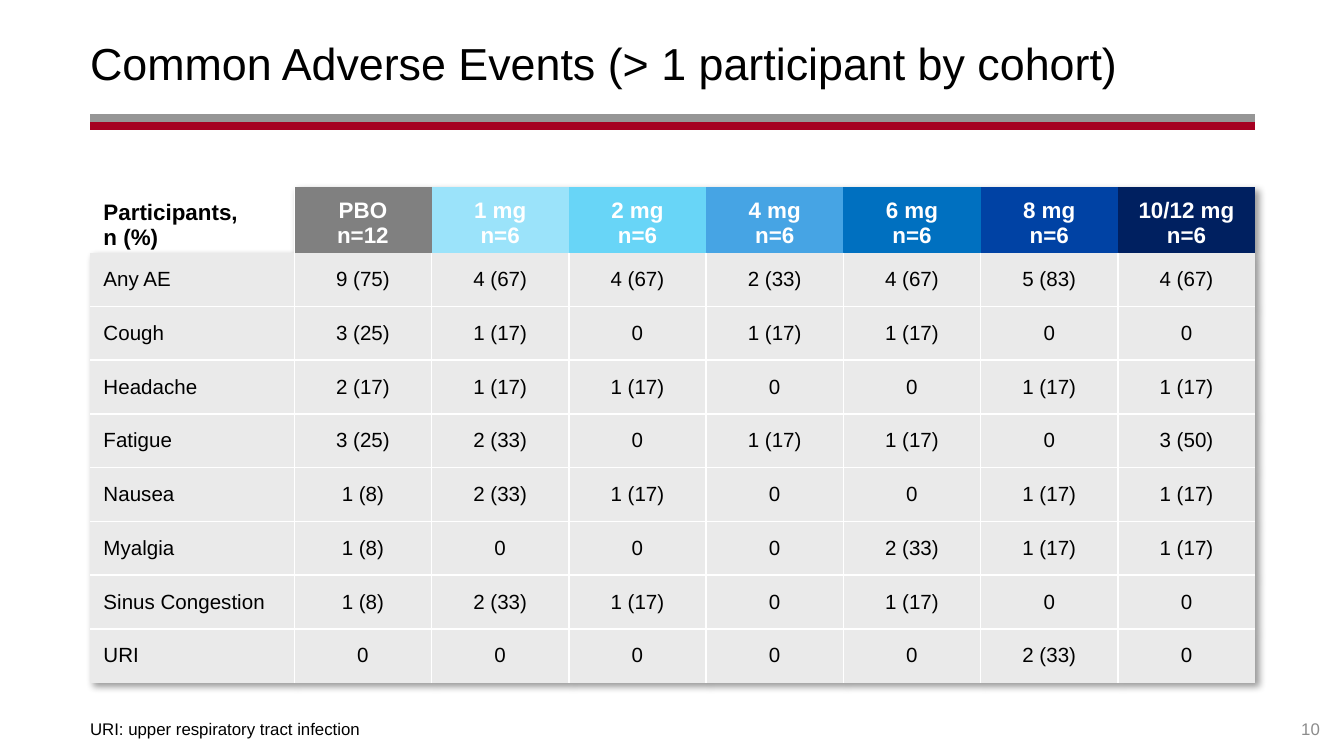
import pptx
import pptx.dml.color
import pptx.enum.shapes
import pptx.enum.text
import pptx.oxml
import pptx.oxml.ns
import pptx.util

Inches, Pt = pptx.util.Inches, pptx.util.Pt
RGBColor = pptx.dml.color.RGBColor
ALIGN = pptx.enum.text.PP_ALIGN
ANCHOR = pptx.enum.text.MSO_ANCHOR

BLACK = RGBColor(0x00, 0x00, 0x00)
WHITE = RGBColor(0xFF, 0xFF, 0xFF)
NUMBER_GRAY = RGBColor(0x8C, 0x8C, 0x8C)
RULE_GRAY = RGBColor(0x96, 0x96, 0x96)
RULE_RED = RGBColor(0xA5, 0x00, 0x21)
BODY_GRAY = RGBColor(0xEA, 0xEA, 0xEA)

TITLE = "Common Adverse Events (> 1 participant by cohort)"
FOOTNOTE = "URI: upper respiratory tract infection"
PAGE_NUMBER = "10"
ROW_HEADING = "Participants,\nn (%)"
COHORTS = [
    ("PBO\nn=12", RGBColor(0x80, 0x80, 0x80)),
    ("1 mg\nn=6", RGBColor(0x9B, 0xE3, 0xFA)),
    ("2 mg\nn=6", RGBColor(0x68, 0xD5, 0xF7)),
    ("4 mg\nn=6", RGBColor(0x46, 0xA4, 0xE4)),
    ("6 mg\nn=6", RGBColor(0x00, 0x70, 0xC0)),
    ("8 mg\nn=6", RGBColor(0x00, 0x42, 0xA4)),
    ("10/12 mg\nn=6", RGBColor(0x00, 0x20, 0x60)),
]
EVENTS = [
    ("Any AE", "9 (75)", "4 (67)", "4 (67)", "2 (33)", "4 (67)", "5 (83)", "4 (67)"),
    ("Cough", "3 (25)", "1 (17)", "0", "1 (17)", "1 (17)", "0", "0"),
    ("Headache", "2 (17)", "1 (17)", "1 (17)", "0", "0", "1 (17)", "1 (17)"),
    ("Fatigue", "3 (25)", "2 (33)", "0", "1 (17)", "1 (17)", "0", "3 (50)"),
    ("Nausea", "1 (8)", "2 (33)", "1 (17)", "0", "0", "1 (17)", "1 (17)"),
    ("Myalgia", "1 (8)", "0", "0", "0", "2 (33)", "1 (17)", "1 (17)"),
    ("Sinus Congestion", "1 (8)", "2 (33)", "1 (17)", "0", "1 (17)", "0", "0"),
    ("URI", "0", "0", "0", "0", "0", "2 (33)", "0"),
]

PAGE_WIDTH = 10
PAGE_HEIGHT = PAGE_WIDTH * 9 / 16
LEFT, WIDTH = 0.67, 8.67
TABLE_TOP, LABEL_WIDTH = 1.39, 1.52
HEADER_HEIGHT, ROW_HEIGHT = 0.49, 0.4
NO_STYLE = "{2D5ABB26-0587-4C30-8999-92F81FD0307C}"
DRAWING_NS = pptx.oxml.ns.nsdecls("a")
SHADOW = (
    f'<a:effectLst {DRAWING_NS}><a:outerShdw blurRad="50800" dist="38100" dir="2700000" '
    'algn="tl" rotWithShape="0"><a:srgbClr val="000000"><a:alpha val="40000"/>'
    "</a:srgbClr></a:outerShdw></a:effectLst>"
)


def style_paragraphs(frame, size, color, align=ALIGN.LEFT, bold=False, gap=0):
    for para in frame.paragraphs:
        para.alignment = align
        para.space_before = para.space_after = Pt(gap)
        para.font.name = "Arial"
        para.font.size = Pt(size)
        para.font.bold = bold
        para.font.color.rgb = color


def set_margins(target, across, down):
    target.margin_left = target.margin_right = Inches(across)
    target.margin_top = target.margin_bottom = Inches(down)


def add_text(page, text, place, size, color, anchor, align=ALIGN.LEFT, down=0):
    box = page.shapes.add_textbox(*map(Inches, place))
    frame = box.text_frame
    frame.word_wrap = True
    frame.vertical_anchor = anchor
    set_margins(frame, 0, down)
    frame.text = text
    style_paragraphs(frame, size, color, align)


def add_rule(page, y, color):
    rule = page.shapes.add_connector(
        pptx.enum.shapes.MSO_CONNECTOR.STRAIGHT,
        Inches(LEFT), Inches(y), Inches(LEFT + WIDTH), Inches(y))
    rule.line.color.rgb = color
    rule.line.width = Pt(4.25)
    rule._element.spPr.append(pptx.oxml.parse_xml(f"<a:effectLst {DRAWING_NS}/>"))


def set_borders(cell, sides):
    """Draw white lines on the given sides (letters of LRTB) and none elsewhere."""
    properties = cell._tc.get_or_add_tcPr()
    for position, side in enumerate("LRTB"):
        fill = f'<a:solidFill><a:srgbClr val="{WHITE}"/></a:solidFill>' if side in sides else "<a:noFill/>"
        properties.insert(position, pptx.oxml.parse_xml(
            f'<a:ln{side} {DRAWING_NS} w="{Pt(1)}">{fill}</a:ln{side}>'))


def fill_cell(cell, text, margins, anchor, background, sides, **style):
    cell.text = text
    set_margins(cell, *margins)
    cell.vertical_anchor = anchor
    style_paragraphs(cell.text_frame, **style)
    if background is None:
        cell.fill.background()
    else:
        cell.fill.solid()
        cell.fill.fore_color.rgb = background
    set_borders(cell, sides)


def add_event_table(page):
    rows, columns = len(EVENTS) + 1, len(COHORTS) + 1
    height = HEADER_HEIGHT + ROW_HEIGHT * len(EVENTS)
    table = page.shapes.add_table(
        rows, columns, Inches(LEFT), Inches(TABLE_TOP), Inches(WIDTH), Inches(height)).table
    table.horz_banding = False
    properties = table._tbl.tblPr
    properties.find(pptx.oxml.ns.qn("a:tableStyleId")).text = NO_STYLE
    properties.insert(0, pptx.oxml.parse_xml(SHADOW))

    for index, column in enumerate(table.columns):
        column.width = Inches((WIDTH - LABEL_WIDTH) / len(COHORTS) if index else LABEL_WIDTH)
    for index, row in enumerate(table.rows):
        row.height = Inches(ROW_HEIGHT if index else HEADER_HEIGHT)

    fill_cell(table.cell(0, 0), ROW_HEADING, (0.1, 0.02), ANCHOR.BOTTOM, None, "R",
              size=12, color=BLACK, bold=True)
    for c, (cohort, color) in enumerate(COHORTS, 1):
        fill_cell(table.cell(0, c), cohort, (0.13, 0.03), ANCHOR.BOTTOM, color,
                  "L" if c == 1 else "", size=12, color=WHITE, align=ALIGN.CENTER, bold=True)

    for r, event in enumerate(EVENTS, 1):
        for c, text in enumerate(event):
            inner = {"L": c > 0, "R": c < columns - 1, "T": r > 1, "B": r < rows - 1}
            sides = [side for side, drawn in inner.items() if drawn]
            fill_cell(table.cell(r, c), text, (0.07, 0) if c else (0.1, 0.02),
                      ANCHOR.MIDDLE, BODY_GRAY, sides, size=11, color=BLACK,
                      align=ALIGN.CENTER if c else ALIGN.LEFT, gap=3 if c else 0)


def main():
    deck = pptx.Presentation()
    deck.slide_width, deck.slide_height = Inches(PAGE_WIDTH), Inches(PAGE_HEIGHT)
    page = deck.slides.add_slide(deck.slide_layouts[6])
    add_rule(page, 0.88, RULE_GRAY)
    add_rule(page, 0.94, RULE_RED)
    add_text(page, TITLE, (LEFT, 0.14, WIDTH, 0.65), 24, BLACK, ANCHOR.MIDDLE, down=0.05)
    add_text(page, FOOTNOTE, (LEFT, 5.12, WIDTH, 0.38), 9, BLACK, ANCHOR.BOTTOM)
    add_text(page, PAGE_NUMBER, (9.33, 5.2, 0.49, 0.3), 9, NUMBER_GRAY, ANCHOR.BOTTOM, ALIGN.RIGHT)
    add_event_table(page)
    deck.save("out.pptx")


if __name__ == "__main__":
    main()
